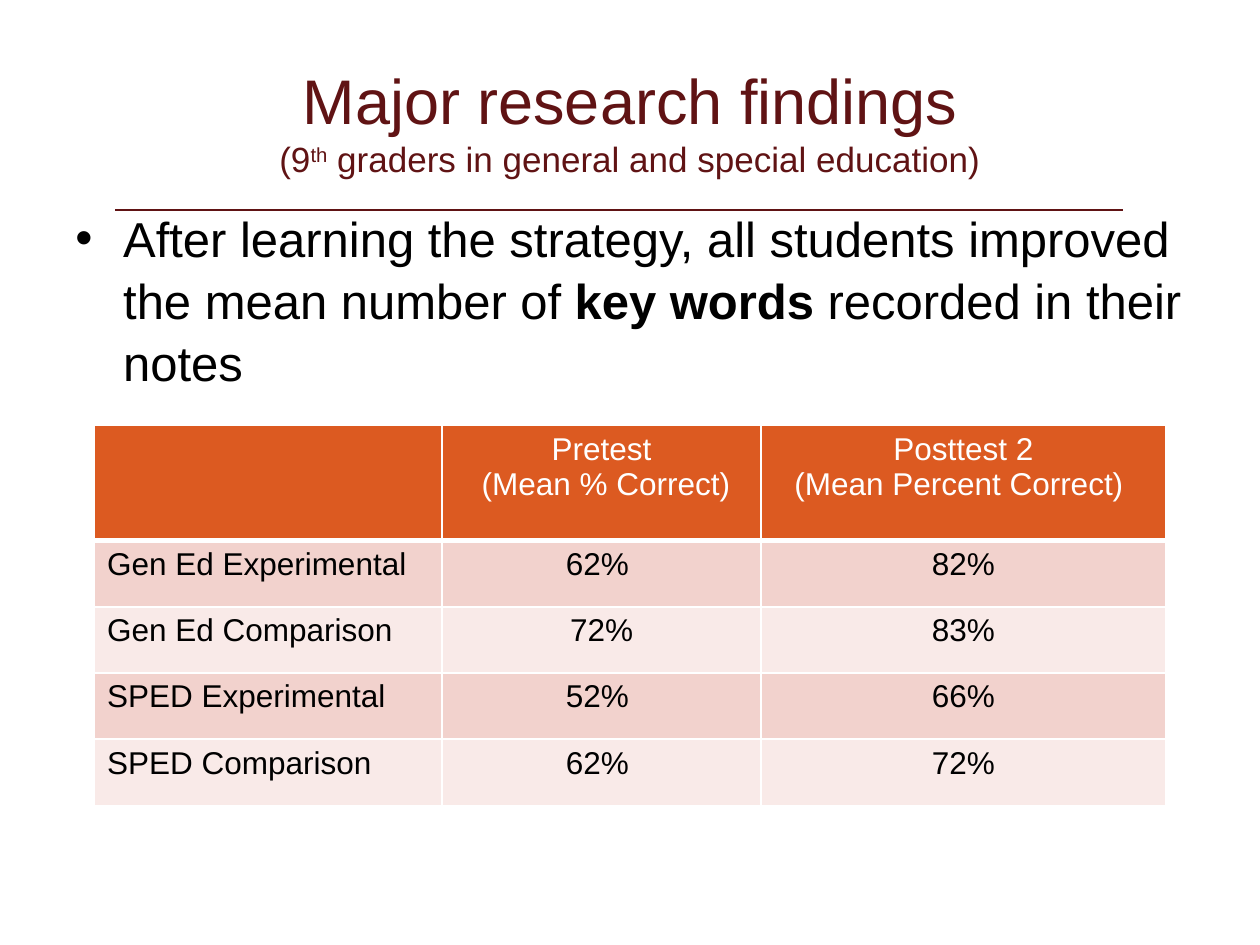
from dataclasses import dataclass

from lxml import etree
from pptx import Presentation
from pptx.dml.color import RGBColor
from pptx.enum.shapes import MSO_CONNECTOR
from pptx.enum.text import MSO_ANCHOR, PP_ALIGN
from pptx.oxml.ns import qn
from pptx.util import Inches, Pt

STRAIGHT = MSO_CONNECTOR.STRAIGHT
MIDDLE = MSO_ANCHOR.MIDDLE
LEFT, CENTER = PP_ALIGN.LEFT, PP_ALIGN.CENTER


@dataclass(frozen=True)
class Theme:
    font: str = "Arial"
    maroon: str = "601314"
    orange: str = "DC5A21"
    bands: tuple = ("F2D2CD", "F9EAE8")
    black: str = "000000"
    white: str = "FFFFFF"
    title: int = 36
    subtitle: int = 20
    body: int = 28
    table: int = 18
    rule: float = 1.5
    border: int = 1
    header_border: int = 3


class SlideBuilder:
    COLUMNS, ROWS = 120, 90

    def __init__(self, deck, theme):
        self.theme = theme
        self.unit_x = deck.slide_width / self.COLUMNS
        self.unit_y = deck.slide_height / self.ROWS
        self.page = deck.slides.add_slide(deck.slide_layouts[5])

    def area(self, left, top, width, height):
        return (round(left * self.unit_x), round(top * self.unit_y),
                round(width * self.unit_x), round(height * self.unit_y))

    def style(self, span, size, color, bold=False):
        font = span.font
        font.name, font.size, font.bold = self.theme.font, Pt(size), bold
        font.color.rgb = RGBColor.from_string(color)

    def title(self, heading, subtitle_parts, *grid):
        box = self.page.shapes.title
        box.left, box.top, box.width, box.height = self.area(*grid)
        frame = box.text_frame
        frame.word_wrap = True
        frame.vertical_anchor = MIDDLE
        para = frame.paragraphs[0]
        para.alignment = CENTER
        span = para.add_run()
        span.text = heading
        self.style(span, self.theme.title, self.theme.maroon)
        para.add_line_break()
        for text, raised in subtitle_parts:
            span = para.add_run()
            span.text = text
            self.style(span, self.theme.subtitle, self.theme.maroon)
            if raised:
                span.font._element.set("baseline", "30000")

    def rule(self, left, right, top):
        start_x, y, end_x, _ = self.area(left, top, right, 0)
        line = self.page.shapes.add_connector(STRAIGHT, start_x, y, end_x, y)
        line.line.color.rgb = RGBColor.from_string(self.theme.maroon)
        line.line.width = Pt(self.theme.rule)
        etree.SubElement(line._element.spPr, qn("a:effectLst"))

    def bullet(self, parts, indent, *grid):
        box = self.page.shapes.add_textbox(*self.area(*grid))
        box.text_frame.word_wrap = True
        para = box.text_frame.paragraphs[0]
        para.line_spacing = 1.05
        properties = para._p.get_or_add_pPr()
        properties.set("marL", str(Inches(indent)))
        properties.set("indent", str(-Inches(indent)))
        etree.SubElement(properties, qn("a:buFont")).set("typeface", self.theme.font)
        etree.SubElement(properties, qn("a:buChar")).set("char", "•")
        for text, bold in parts:
            span = para.add_run()
            span.text = text
            self.style(span, self.theme.body, self.theme.black, bold)

    def border(self, cell, side, width):
        line = etree.SubElement(cell._tc.get_or_add_tcPr(), qn(f"a:{side}"),
                                w=str(Pt(width)))
        fill = etree.SubElement(line, qn("a:solidFill"))
        etree.SubElement(fill, qn("a:srgbClr"), val=self.theme.white)

    def cell(self, cell, text, fill, color, align, top, bottom):
        for side, width in (("lnL", self.theme.border), ("lnR", self.theme.border),
                            ("lnT", top), ("lnB", bottom)):
            self.border(cell, side, width)
        cell.fill.solid()
        cell.fill.fore_color.rgb = RGBColor.from_string(fill)
        cell.text_frame.text = text
        for para in cell.text_frame.paragraphs:
            para.alignment = align
            para.font.size = Pt(self.theme.table)
            for span in para.runs:
                self.style(span, self.theme.table, color)

    def table(self, records, widths, heights, left, top):
        theme = self.theme
        grid = self.area(left, top, sum(widths), sum(heights))
        table = self.page.shapes.add_table(len(records), len(widths), *grid).table
        for column, width in zip(table.columns, widths):
            column.width = round(width * self.unit_x)
        for row, height in zip(table.rows, heights):
            row.height = round(height * self.unit_y)
        for r, record in enumerate(records):
            fill = theme.bands[(r - 1) % 2] if r else theme.orange
            color = theme.black if r else theme.white
            above = theme.header_border if r == 1 else theme.border
            below = theme.border if r else theme.header_border
            for c, text in enumerate(record):
                align = CENTER if c else LEFT
                self.cell(table.cell(r, c), text, fill, color, align, above, below)


def main():
    deck = Presentation()
    deck.slide_width, deck.slide_height = Inches(10), Inches(7.5)
    slide = SlideBuilder(deck, Theme())
    slide.rule(11, 107, 20)
    slide.title("Major research findings",
                [("(9", False), ("th", True),
                 (" graders in general and special education)", False)],
                9, 4, 102, 15)
    slide.bullet([("After learning the strategy, all students improved "
                   "the mean number of ", False),
                  ("key words ", True), ("recorded in their notes", False)],
                 0.38, 6, 19, 108, 65)
    records = [
        ("", "Pretest\n (Mean % Correct)", "Posttest 2\n(Mean Percent Correct) "),
        ("Gen Ed Experimental", "62% ", "82%"),
        ("Gen Ed Comparison", "72%", "83%"),
        ("SPED Experimental", "52% ", "66%"),
        ("SPED Comparison", "62% ", "72%"),
    ]
    slide.table(records, (33.1, 30.4, 38.5), (11, *[6.3] * 4), 9, 40.5)
    deck.save("out.pptx")


if __name__ == "__main__":
    main()
